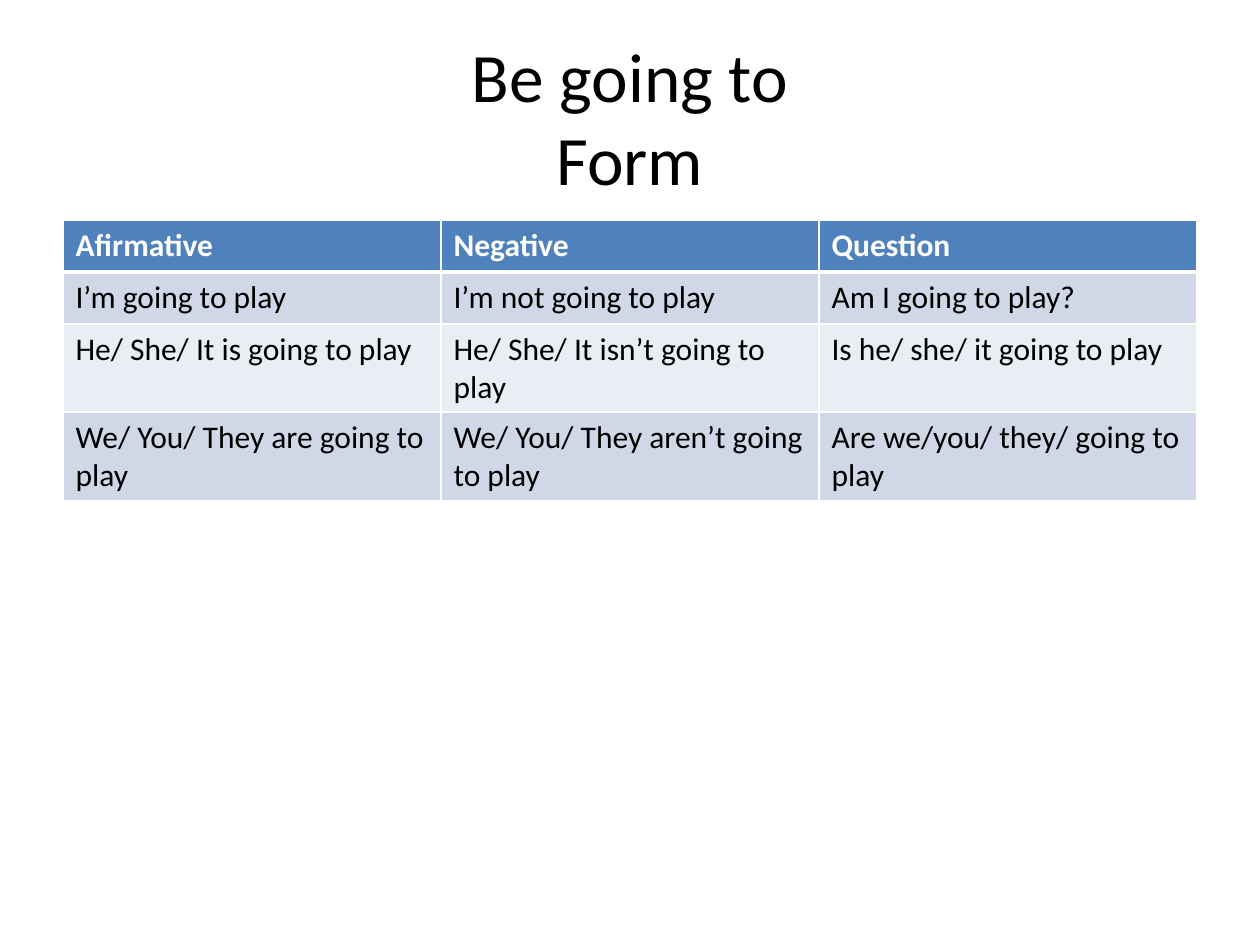
import lxml.etree
import pptx
import pptx.dml.color
import pptx.enum.text
import pptx.oxml.ns
import pptx.util

Inches = pptx.util.Inches
ALIGN = pptx.enum.text.PP_ALIGN
ANCHOR = pptx.enum.text.MSO_ANCHOR

TITLE = "Be going to\vForm"
FORMS = [
    ("Afirmative", "Negative", "Question"),
    ("I’m going to play", "I’m not going to play", "Am I going to play?"),
    ("He/ She/ It is going to play", "He/ She/ It isn’t going to play",
     "Is he/ she/ it going to play"),
    ("We/ You/ They are going to play", "We/ You/ They aren’t going to play",
     "Are we/you/ they/ going to play"),
]

THEME = {
    "font": "Calibri",
    "title_size": 39.6,
    "cell_size": 18,
    "text": "000000",
    "header_text": "FFFFFF",
    "header_fill": "4F81BD",
    "band_fills": ("D0D8E8", "E9EDF4"),
    "border": "FFFFFF",
}
MARGIN = 0.5
CONTENT_WIDTH = 9
ROW_HEIGHT = 0.41


def write_text(frame, text, size, color, bold=False, align=ALIGN.LEFT):
    frame.word_wrap = True
    paragraph = frame.paragraphs[0]
    paragraph.text = text
    paragraph.alignment = align
    for run in paragraph.runs:
        run.font.name = THEME["font"]
        run.font.size = pptx.util.Pt(size)
        run.font.bold = bold
        run.font.color.rgb = pptx.dml.color.RGBColor.from_string(color)


def add_borders(cell, **widths):
    """Draw cell borders; widths maps L, R, T, B (in that order) to points."""
    qn = pptx.oxml.ns.qn
    properties = cell._tc.get_or_add_tcPr()
    for side, width in widths.items():
        line = lxml.etree.SubElement(properties, qn(f"a:ln{side}"),
                                     w=str(pptx.util.Pt(width)))
        fill = lxml.etree.SubElement(line, qn("a:solidFill"))
        lxml.etree.SubElement(fill, qn("a:srgbClr"), val=THEME["border"])


def add_title(slide):
    title = slide.shapes.add_textbox(Inches(MARGIN), Inches(0.3),
                                     Inches(CONTENT_WIDTH), Inches(1.25))
    title.text_frame.vertical_anchor = ANCHOR.MIDDLE
    write_text(title.text_frame, TITLE, THEME["title_size"], THEME["text"],
               align=ALIGN.CENTER)


def add_forms_table(slide):
    table = slide.shapes.add_table(
        len(FORMS), len(FORMS[0]), Inches(MARGIN), Inches(1.75),
        Inches(CONTENT_WIDTH), Inches(ROW_HEIGHT * len(FORMS))).table
    for row, sentences in enumerate(FORMS):
        header = row == 0
        bands = THEME["band_fills"]
        fill = THEME["header_fill"] if header else bands[(row - 1) % len(bands)]
        for column, sentence in enumerate(sentences):
            cell = table.cell(row, column)
            write_text(cell.text_frame, sentence, THEME["cell_size"],
                       THEME["header_text" if header else "text"], bold=header)
            add_borders(cell, L=1, R=1, T=3 if row == 1 else 1, B=3 if header else 1)
            cell.fill.solid()
            cell.fill.fore_color.rgb = pptx.dml.color.RGBColor.from_string(fill)


def main():
    deck = pptx.Presentation()
    deck.slide_width, deck.slide_height = Inches(10), Inches(7.5)
    slide = deck.slides.add_slide(deck.slide_layouts[6])
    add_title(slide)
    add_forms_table(slide)
    deck.save("out.pptx")


if __name__ == "__main__":
    main()
